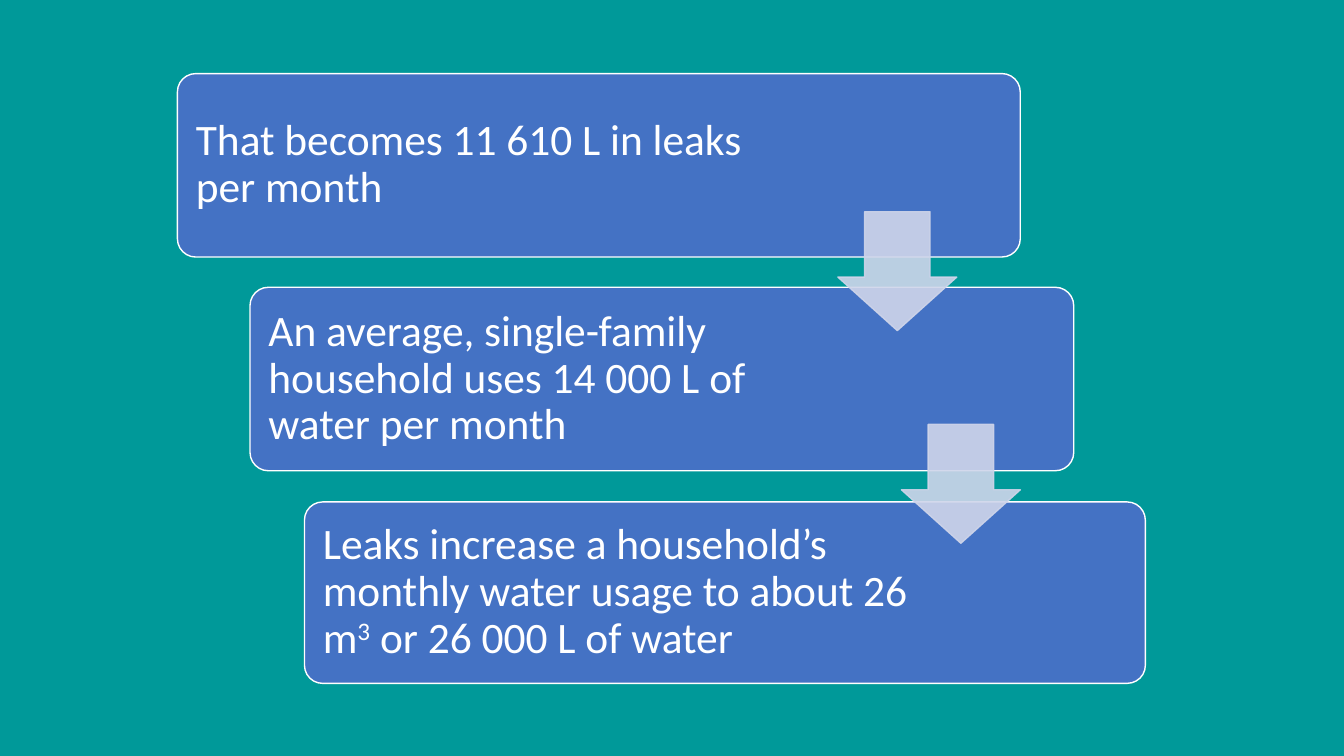
"""Build a slide of three stepped boxes about household water leaks."""
from lxml import etree
from pptx import Presentation
from pptx.dml.color import RGBColor
from pptx.enum.shapes import MSO_SHAPE
from pptx.enum.text import MSO_ANCHOR, PP_ALIGN
from pptx.oxml.ns import qn
from pptx.util import Inches, Pt

ROUNDED = MSO_SHAPE.ROUNDED_RECTANGLE
DOWN_ARROW = MSO_SHAPE.DOWN_ARROW
MIDDLE = MSO_ANCHOR.MIDDLE
LEFT = PP_ALIGN.LEFT

COLORS = {"background": "009999", "box": "4472C4", "white": "FFFFFF", "arrow": "CFD5EA"}
FRAME_FORMAT = {
    "word_wrap": True,
    "vertical_anchor": MIDDLE,
    "margin_left": Inches(0.13),
    "margin_right": Inches(2.25),
    "margin_top": Inches(0.13),
    "margin_bottom": Inches(0.13),
}
PARAGRAPH_FORMAT = {"alignment": LEFT, "line_spacing": 0.9}
FONT_FORMAT = {"name": "Calibri", "size": Pt(31)}
STEPS = [
    ((1.76, 0.73, 8.36, 1.82), [("That becomes 11 610 L in leaks per month", 0)]),
    ((2.48, 2.85, 8.17, 1.82),
     [("An average, single-family household uses 14 000 L of water per month", 0)]),
    ((3.02, 4.98, 8.34, 1.8),
     [("Leaks increase a household’s monthly water usage to about 26 m", 0),
      ("3", 30),
      (" or 26 000 L of water", 0)]),
]
ARROW_SIZE = 1.18
ARROWS = [(8.31, 2.1), (8.94, 4.21)]


def color(name):
    """Return the named palette colour."""
    return RGBColor.from_string(COLORS[name])


def apply_format(target, values):
    """Set each formatting value on the target."""
    for name, value in values.items():
        setattr(target, name, value)


def add_shape(slide, kind, bounds, adjustments, fill, line):
    """Add a flat preset shape with a thin outline."""
    shape = slide.shapes.add_shape(kind, *map(Inches, bounds))
    shape.shadow.inherit = False
    for index, value in enumerate(adjustments):
        shape.adjustments[index] = value
    shape.fill.solid()
    shape.fill.fore_color.rgb = color(fill)
    shape.line.color.rgb = color(line)
    shape.line.width = Pt(1)
    return shape


def add_step(slide, bounds, runs):
    """Add a rounded box holding one statement."""
    shape = add_shape(slide, ROUNDED, bounds, [0.1], "box", "white")
    apply_format(shape.text_frame, FRAME_FORMAT)
    paragraph = shape.text_frame.paragraphs[0]
    apply_format(paragraph, PARAGRAPH_FORMAT)
    for text, baseline in runs:
        run = paragraph.add_run()
        run.text = text
        apply_format(run.font, FONT_FORMAT)
        run.font.color.rgb = color("white")
        if baseline:
            run._r.get_or_add_rPr().set("baseline", str(baseline * 1000))


def add_arrow(slide, left, top):
    """Add a slightly transparent arrow between two steps."""
    bounds = (left, top, ARROW_SIZE, ARROW_SIZE)
    shape = add_shape(slide, DOWN_ARROW, bounds, [0.55, 0.45], "arrow", "arrow")
    for tone in shape._element.spPr.iter(qn("a:srgbClr")):
        etree.SubElement(tone, qn("a:alpha")).set("val", "90000")


def main():
    """Build and save the presentation."""
    presentation = Presentation()
    presentation.slide_width = Inches(13.33)
    presentation.slide_height = Inches(7.5)
    slide = presentation.slides.add_slide(presentation.slide_layouts[6])
    slide.background.fill.solid()
    slide.background.fill.fore_color.rgb = color("background")
    for bounds, runs in STEPS:
        add_step(slide, bounds, runs)
    for left, top in ARROWS:
        add_arrow(slide, left, top)
    presentation.save("out.pptx")


if __name__ == "__main__":
    main()
